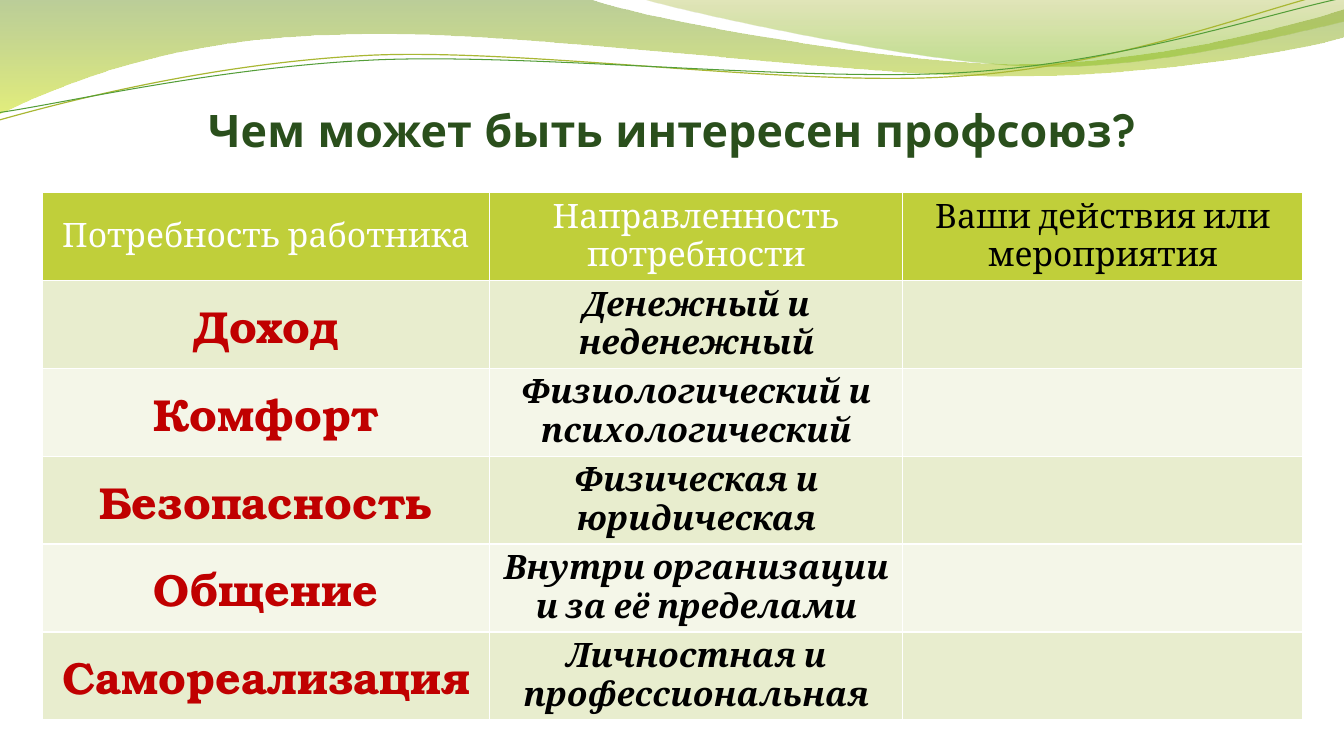
from lxml.etree import SubElement as Sub
from pptx import Presentation
from pptx.dml.color import RGBColor as Rgb
from pptx.enum.text import MSO_ANCHOR as Anchor, MSO_AUTO_SIZE as Auto, PP_ALIGN as Align
from pptx.oxml.ns import qn
from pptx.util import Inches, Pt

HUES = {
    "white": "FFFFFF", "black": "000000", "title": "2A4F1C", "need": "C00000",
    "head": "C0CF3A", "odd": "E8EDCE", "even": "F4F6E8",
    "moss": "69921C", "lemon": "CCE10F", "olive": "9BAA1A", "leaf": "81BA16",
    "gold": "A9B733", "green": "549E39",
}

BANDS = [
    ([(0, 0), (44, -0.1), (47.6, 2.3, 66.3, 8.4, 75.8, 8.4),
      (85.3, 8.4, 95.8, 3.5, 100, 1.2), (100.1, 4.8),
      (98.3, 5.9, 86.9, 10.1, 74.6, 10), (62.2, 10, 38.2, 3.7, 25.7, 4.5),
      (12.8, 4.8, 4.6, 11.1, -0.2, 15.1)],
     [(0, "moss", 45), (1, "lemon", 55)]),
    ([(47.9, -0.1), (50.9, 1.5, 68.2, 8.3, 76.9, 8.7),
      (85.5, 9.2, 96.2, 4.3, 100, 2.8), (100, 0)],
     [(0, "olive", 30), (0.8, "leaf", 45)]),
]
LINES = [
    ([(-0.1, 15.9), (4.7, 13.5, 15.8, 8.3, 27.7, 7.3),
      (39.5, 6.4, 59.2, 11.6, 71.2, 10.1), (83.3, 8.8, 93.8, 1.1, 99.8, -1.3)],
     "gold", 0.85),
    ([(-0.1, 14.9), (4.7, 13.7, 16.4, 8.8, 28.3, 7.9),
      (40.3, 7.1, 59.7, 10.9, 71.6, 9.6), (83.6, 8.3, 94.1, 1.9, 100, -0.3)],
     "green", 0.75),
]
HEAD = ["Потребность работника", "Направленность потребности",
        "Ваши действия или мероприятия"]
NEEDS = [
    ("Доход", "Денежный и неденежный"),
    ("Комфорт", "Физиологический и психологический"),
    ("Безопасность", "Физическая и юридическая"),
    ("Общение", "Внутри организации и за её пределами"),
    ("Самореализация", "Личностная и профессиональная"),
]


def write(frame, text, size=24, font="Cambria", hue="black", bold=False, slant=False):
    para = frame.paragraphs[0]
    para.alignment = Align.CENTER
    run = para.add_run()
    run.text = text
    face = run.font
    face.size, face.name, face.bold, face.italic = Pt(size), font, bold, slant
    face.color.rgb = Rgb.from_string(HUES[hue])


class Deck:
    """Draws on one slide, with places given as percent of its size."""

    def __init__(self):
        self.show = Presentation()
        self.show.slide_width, self.show.slide_height = Inches(13.33), Inches(7.5)
        self.slide = self.show.slides.add_slide(self.show.slide_layouts[5])
        self.shapes = self.slide.shapes

    def x(self, share):
        return round(self.show.slide_width * share / 100)

    def y(self, share):
        return round(self.show.slide_height * share / 100)

    def curve(self, parts, close):
        spots = [(self.x(a), self.y(b)) for part in parts
                 for a, b in zip(part[::2], part[1::2])]
        pen = self.shapes.build_freeform(*spots[0])
        pen.add_line_segments(spots[1:], close=close)
        shape = pen.convert_to_shape()
        shape.shadow.inherit = False
        steps = iter(list(shape._element.iter(qn("a:lnTo"))))
        for part in parts[1:]:
            first = next(steps)
            if len(part) == 6:
                first.tag = qn("a:cubicBezTo")
                for step in (next(steps), next(steps)):
                    first.append(step[0])
                    step.getparent().remove(step)
        return shape

    def band(self, parts, stops):
        shape = self.curve(parts, True)
        shape.line.fill.background()
        shape.fill.gradient()
        shape.fill.gradient_angle = 270
        marks = shape._element.iter(qn("a:gs"))
        for stop, mark, (place, hue, alpha) in zip(shape.fill.gradient_stops, marks, stops):
            stop.position = place
            stop.color.rgb = Rgb.from_string(HUES[hue])
            Sub(mark[0], qn("a:alpha"), val=str(alpha * 1000))

    def line(self, parts, hue, width):
        shape = self.curve(parts, False)
        shape.fill.background()
        shape.line.color.rgb = Rgb.from_string(HUES[hue])
        shape.line.width = Pt(width)

    def title(self, text, left, top, width, height):
        box = self.shapes.title
        box.left, box.top = self.x(left), self.y(top)
        box.width, box.height = self.x(width), self.y(height)
        self.shapes._spTree.append(box._element)
        frame = box.text_frame
        frame.word_wrap, frame.auto_size = True, Auto.NONE
        frame.vertical_anchor = Anchor.BOTTOM
        frame.margin_left = frame.margin_right = frame.margin_bottom = 0
        frame.margin_top = Inches(0.05)
        write(frame, text, size=32, font="Quicksand", hue="title", bold=True)

    def cell(self, cell, fill):
        cell.vertical_anchor = Anchor.MIDDLE
        props = cell._tc.get_or_add_tcPr()
        for side in "LRTB":
            edge = Sub(props, qn(f"a:ln{side}"), w=str(Pt(1)))
            Sub(Sub(edge, qn("a:solidFill")), qn("a:srgbClr"), val=HUES["white"])
        cell.fill.solid()
        cell.fill.fore_color.rgb = Rgb.from_string(HUES[fill])

    def table(self, left, top, widths, height):
        count = len(NEEDS) + 1
        grid = self.shapes.add_table(count, len(widths), self.x(left), self.y(top),
                                     self.x(sum(widths)), self.y(height * count)).table
        for col, width in zip(grid.columns, widths):
            col.width = self.x(width)
        for row in grid.rows:
            row.height = self.y(height)
        for col, text in enumerate(HEAD):
            cell = grid.cell(0, col)
            self.cell(cell, "head")
            write(cell.text_frame, text, hue="black" if col == 2 else "white")
        for row, (need, aim) in enumerate(NEEDS, 1):
            cells = [grid.cell(row, col) for col in range(len(widths))]
            for cell in cells:
                self.cell(cell, "odd" if row % 2 else "even")
            write(cells[0].text_frame, need, size=32, font="TeX Gyre Bonum",
                  hue="need", bold=True)
            write(cells[1].text_frame, aim, bold=True, slant=True)


def main():
    deck = Deck()
    for band in BANDS:
        deck.band(*band)
    for line in LINES:
        deck.line(*line)
    deck.title("Чем может быть интересен профсоюз?", 5.1, 2.8, 89.8, 17.87)
    deck.table(3.15, 25.5, (33.3, 30.73, 29.78), 11.62)
    deck.show.save("out.pptx")


if __name__ == "__main__":
    main()
